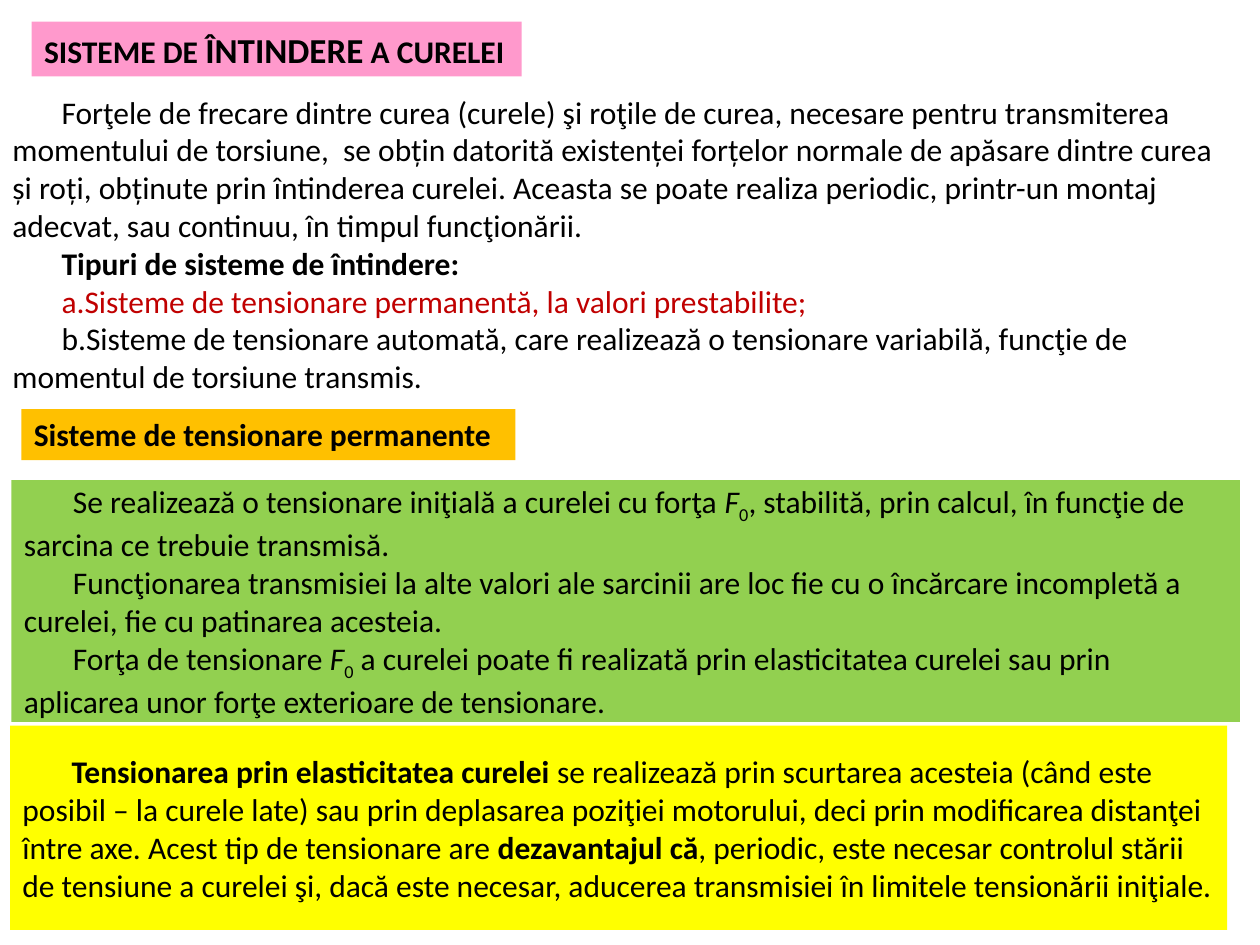
from dataclasses import dataclass

from lxml import etree
from pptx import Presentation
from pptx.dml.color import RGBColor
from pptx.enum.shapes import MSO_SHAPE
from pptx.enum.text import MSO_ANCHOR, MSO_AUTO_SIZE, PP_ALIGN
from pptx.oxml.ns import qn
from pptx.slide import Slide
from pptx.util import Inches, Pt

RECT = MSO_SHAPE.RECTANGLE
TOP, MIDDLE = MSO_ANCHOR.TOP, MSO_ANCHOR.MIDDLE
FIXED = MSO_AUTO_SIZE.NONE
LEFT = PP_ALIGN.LEFT
WIDTH, HEIGHT = 10, 7.5
TITLE_ONLY = 5
COLORS = {
    "text": "000000",
    "accent": "C00000",
    "title": "FF99CC",
    "heading": "FFC000",
    "initial": "92D050",
    "elastic": "FFFF00",
}
PRELOAD = [("F", {"italic": True}), ("0", {"baseline": -25})]


@dataclass
class BeltSlide:
    """Holds the text style and the slide, and places each kind of element."""

    slide: Slide
    font: str = "Calibri"
    size: int = 18
    indent: float = 0.39

    def place(self, left, top, width, height):
        return (Inches(left * WIDTH), Inches(top * HEIGHT),
                Inches(width * WIDTH), Inches(height * HEIGHT))

    def add_run(self, paragraph, text, size=None, color="text", bold=False,
                italic=False, baseline=0):
        run = paragraph.add_run()
        run.text = text
        font = run.font
        font.name, font.size = self.font, Pt(size or self.size)
        font.bold, font.italic = bold, italic
        font.color.rgb = RGBColor.from_string(COLORS[color])
        if baseline:
            run._r.get_or_add_rPr().set("baseline", str(baseline * 1000))

    def fill_text(self, shape, paragraphs, anchor=MIDDLE, indent=True, wrap=True, lettered=()):
        frame = shape.text_frame
        frame.auto_size, frame.word_wrap = FIXED, wrap
        frame.vertical_anchor = anchor
        for index, runs in enumerate(paragraphs):
            paragraph = frame.add_paragraph() if index else frame.paragraphs[0]
            paragraph.alignment = LEFT
            properties = paragraph._p.get_or_add_pPr()
            if indent:
                properties.set("marL", "0")
                properties.set("indent", str(Inches(self.indent)))
            if index in lettered:
                etree.SubElement(properties, qn("a:buFont"), typeface="+mj-lt")
                etree.SubElement(properties, qn("a:buAutoNum"), type="alphaLcPeriod")
            for text, style in runs:
                self.add_run(paragraph, text, **style)

    def paint(self, shape, color):
        shape.fill.solid()
        shape.fill.fore_color.rgb = RGBColor.from_string(COLORS[color])

    def title(self, area, color, runs):
        heading = self.slide.shapes.title
        heading.left, heading.top, heading.width, heading.height = self.place(*area)
        self.paint(heading, color)
        self.fill_text(heading, [runs], TOP, indent=False, wrap=False)

    def text(self, area, paragraphs, **layout):
        self.fill_text(self.slide.shapes.add_textbox(*self.place(*area)), paragraphs, **layout)

    def panel(self, area, color, paragraphs, **layout):
        panel = self.slide.shapes.add_shape(RECT, *self.place(*area))
        panel.shadow.inherit = False
        panel.line.fill.background()
        self.paint(panel, color)
        self.fill_text(panel, paragraphs, **layout)


def main():
    deck = Presentation()
    deck.slide_width, deck.slide_height = Inches(WIDTH), Inches(HEIGHT)
    belt = BeltSlide(deck.slides.add_slide(deck.slide_layouts[TITLE_ONLY]))
    bold = {"bold": True}

    belt.title((0.025, 0.023, 0.389, 0.058), "title", [
        ("SISTEME DE ", bold),
        ("ÎNTINDERE", {"bold": True, "size": 20}),
        (" A CURELEI", bold),
    ])
    belt.text((0, 0.09, 0.975, 0.336), [
        [("Forţele de frecare dintre curea (curele) şi roţile de curea, necesare pentru "
          "transmiterea momentului de torsiune,  se obțin datorită existenței forțelor "
          "normale de apăsare dintre curea și roți, obținute prin întinderea curelei. "
          "Aceasta se poate realiza periodic, printr-un montaj adecvat, sau continuu, "
          "în timpul funcţionării.", {})],
        [("Tipuri de sisteme de întindere:", bold)],
        [("Sisteme de tensionare permanentă, la valori prestabilite;", {"color": "accent"})],
        [("Sisteme de tensionare automată, care realizează o tensionare variabilă, "
          "funcţie de momentul de torsiune transmis.", {})],
    ], lettered=(2, 3))
    belt.panel((0.017, 0.433, 0.392, 0.054), "heading",
               [[("Sisteme de tensionare permanente", bold)]], anchor=TOP, indent=False)
    belt.panel((0.009, 0.508, 0.975, 0.256), "initial", [
        [("Se realizează o tensionare iniţială a curelei cu forţa ", {}), *PRELOAD,
         (", stabilită, prin calcul, în funcţie de sarcina ce trebuie transmisă.", {})],
        [("Funcţionarea transmisiei la alte valori ale sarcinii are loc fie cu o "
          "încărcare incompletă a curelei, fie cu patinarea acesteia.", {})],
        [("Forţa de tensionare ", {}), *PRELOAD,
         (" a curelei poate fi realizată prin elasticitatea curelei sau prin aplicarea "
          "unor forţe exterioare de tensionare.", {})],
    ])
    belt.panel((0.008, 0.768, 0.966, 0.216), "elastic", [[
        ("Tensionarea prin elasticitatea curelei ", bold),
        ("se realizează prin scurtarea acesteia (când este posibil – la curele late) sau "
         "prin deplasarea poziţiei motorului, deci prin modificarea distanţei între axe. "
         "Acest tip de tensionare are ", {}),
        ("dezavantajul că", bold),
        (", periodic, este necesar controlul stării de tensiune a curelei şi, dacă este "
         "necesar, aducerea transmisiei în limitele tensionării iniţiale.", {}),
    ]])
    deck.save("out.pptx")


if __name__ == "__main__":
    main()
